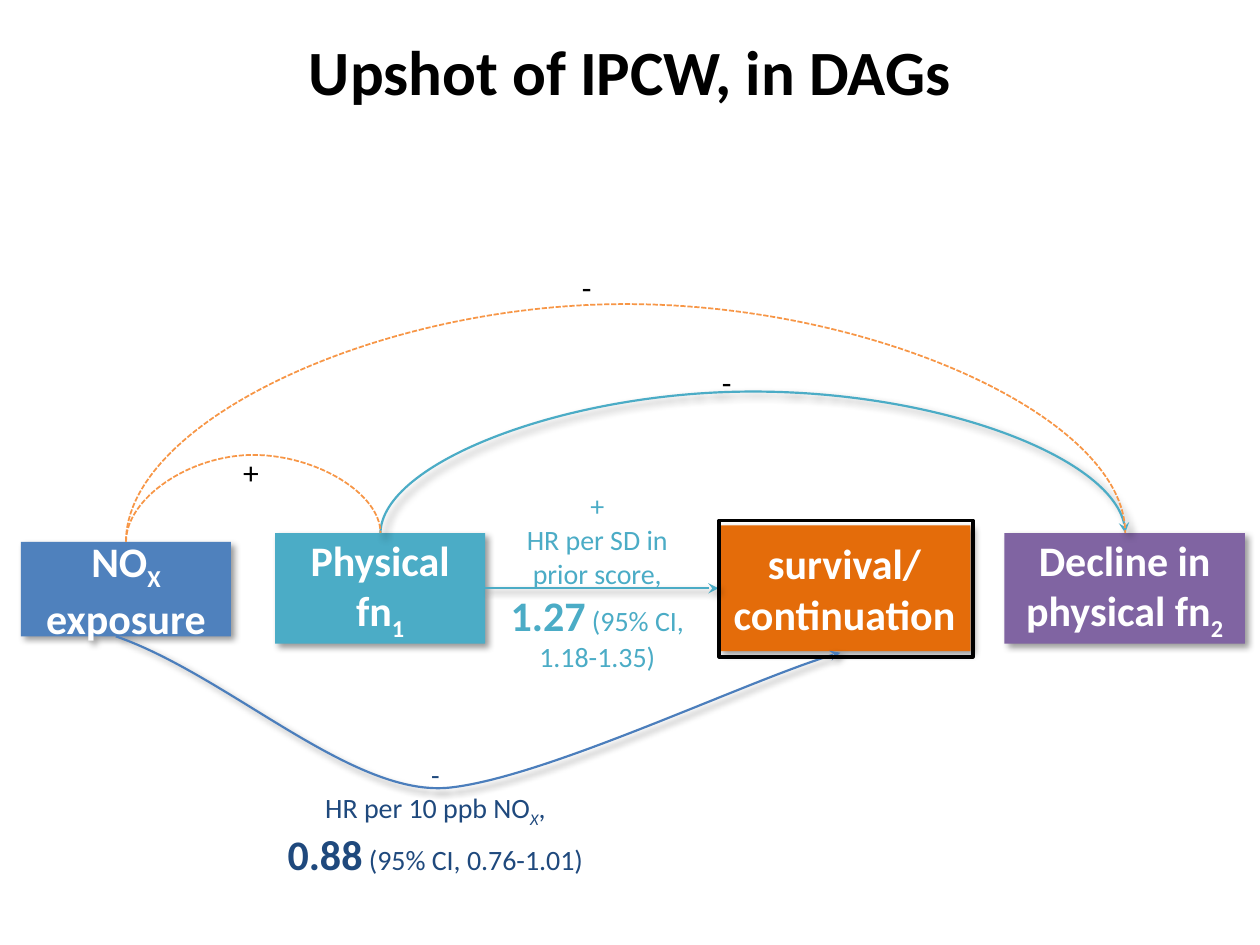
from lxml import etree
from pptx import Presentation, util as u
from pptx.dml.color import RGBColor
from pptx.enum import dml, shapes, text
from pptx.oxml.ns import qn

ORANGE, TEAL, BLUE, NAVY = "F79646", "4BACC6", "4B7EBC", "1F497D"
SUB = {"baseline": -25}
BIG = {"size": 24, "bold": True}


def color(value):
    return RGBColor.from_string(value)


def add_child(parent, tag, **attributes):
    child = etree.SubElement(parent, qn(tag))
    for name, value in attributes.items():
        child.set(name, str(value))
    return child


def set_effects(item, shadow=True):
    effects = add_child(item._element.spPr, "a:effectLst")
    if shadow:
        outer = add_child(effects, "a:outerShdw", blurRad=u.Pt(4), dist=u.Pt(3),
                          dir=45 * 60000, algn="tl", rotWithShape=0)
        black = add_child(outer, "a:srgbClr", val="000000")
        add_child(black, "a:alpha", val=40000)


def set_line(item, ink, width, dashed=False, arrow=False):
    item.line.color.rgb = color(ink)
    item.line.width = u.Pt(width)
    if dashed:
        item.line.dash_style = dml.MSO_LINE.SQUARE_DOT
    if arrow:
        add_child(item.line._get_or_add_ln(), "a:tailEnd", type="stealth")


def add_span(para, content, size=18, ink="000000", bold=False, italic=False, baseline=0):
    span = para.add_run()
    span.text = content
    font = span.font
    font.name, font.size = "Calibri", u.Pt(size)
    font.bold, font.italic = bold, italic
    font.color.rgb = color(ink)
    if baseline:
        span._r.get_or_add_rPr().set("baseline", str(baseline * 1000))


def write(box, paragraphs, align=text.PP_ALIGN.CENTER, anchor=text.MSO_ANCHOR.MIDDLE, **base):
    frame = box.text_frame
    frame.word_wrap = True
    frame.vertical_anchor = anchor
    for index, spans in enumerate(paragraphs):
        para = frame.add_paragraph() if index else frame.paragraphs[0]
        para.alignment = align
        for content, change in spans:
            add_span(para, content, **{**base, **change})


def add_node(page, bounds, fill, spans):
    box = page.shapes.add_shape(shapes.MSO_SHAPE.RECTANGLE, *map(u.Pt, bounds))
    box.fill.solid()
    box.fill.fore_color.rgb = color(fill)
    box.line.fill.background()
    set_effects(box)
    write(box, [spans], ink="FFFFFF", **BIG)


def add_frame(page, bounds):
    box = page.shapes.add_shape(shapes.MSO_SHAPE.RECTANGLE, *map(u.Pt, bounds))
    box.fill.background()
    set_line(box, "000000", 2.25)
    set_effects(box, shadow=False)


def add_label(page, bounds, paragraphs, **base):
    box = page.shapes.add_textbox(*map(u.Pt, bounds))
    write(box, paragraphs, anchor=text.MSO_ANCHOR.TOP, **base)
    box.text_frame.auto_size = text.MSO_AUTO_SIZE.SHAPE_TO_FIT_TEXT


def add_arrow(page, start, end, ink):
    arrow = page.shapes.add_connector(
        shapes.MSO_CONNECTOR.STRAIGHT, *map(u.Pt, (*start, *end)))
    set_line(arrow, ink, 1.25, arrow=True)
    set_effects(arrow)


def add_arc(page, start, end, peak, ink, width, dashed=False, arrow=False):
    (x1, y1), (x2, y2) = start, end
    across, along = y1 - y2, x2 - x1
    left, top = (x1 + x2 - across) / 2, (y1 + y2 - along) / 2
    arc = page.shapes.add_connector(
        shapes.MSO_CONNECTOR.CURVE,
        *map(u.Pt, (left + across, top + along, left, top)))
    properties = arc._element.spPr
    properties.find(qn("a:xfrm")).set("rot", str(90 * 60000))
    guides = properties.find(qn("a:prstGeom")).find(qn("a:avLst"))
    bend = round((y1 - peak) / across * 100000)
    add_child(guides, "a:gd", name="adj1", fmla=f"val {bend}")
    set_line(arc, ink, width, dashed, arrow)
    set_effects(arc, shadow=arrow)


def add_bezier(page, points, ink):
    corners = [(u.Pt(x), u.Pt(y)) for x, y in points]
    builder = page.shapes.build_freeform(*corners[0])
    builder.add_line_segments(corners[1:], close=False)
    curve = builder.convert_to_shape()
    steps = list(curve._element.iter(qn("a:lnTo")))
    for first in range(0, len(steps), 3):
        group = steps[first:first + 3]
        bezier = add_child(group[0].getparent(), "a:cubicBezTo")
        for step in group:
            bezier.append(step[0])
            step.getparent().remove(step)
    curve.fill.background()
    set_line(curve, ink, 1.25, arrow=True)
    set_effects(curve)


def main():
    deck = Presentation()
    deck.slide_width, deck.slide_height = u.Pt(720), u.Pt(540)
    page = deck.slides.add_slide(deck.slide_layouts[6])

    title = page.shapes.add_textbox(*map(u.Pt, (36, 5.8, 648, 68.4)))
    write(title, [[("Upshot of IPCW, in DAGs", {})]], size=36, bold=True)

    add_node(page, (12, 309.6, 120, 54), "4F81BD",
             [("NO", {}), ("X", SUB), (" exposure", {})])
    add_node(page, (157.2, 304.6, 120, 63.2), TEAL, [("Physical fn", {}), ("1", SUB)])
    add_node(page, (573.9, 304.6, 137.5, 63.2), "8064A2",
             [("Decline in physical fn", {}), ("2", SUB)])
    add_node(page, (410.6, 300.2, 144, 72), "E46C0A", [("survival/ continuation", {})])

    add_arrow(page, (277.2, 336.2), (410.6, 336.2), TEAL)
    add_bezier(page, [(66.2, 363.6), (131.8, 386.6), (202.3, 456.5), (257.8, 450),
                      (313.9, 443.5), (434.9, 385.2), (480.2, 373)], BLUE)

    exposure, function, decline = (72, 309.6), (217.4, 304.6), (643, 304.6)
    add_arc(page, (217.4, 305.1), decline, 225.4, TEAL, 1.25, arrow=True)
    add_arc(page, exposure, function, 259.9, ORANGE, 1, dashed=True)
    add_arc(page, exposure, decline, 173.5, ORANGE, 1, dashed=True)
    add_frame(page, (411.1, 297.4, 144.7, 77.8))

    add_label(page, (146.9, 429.1, 203.8, 74.9), [
        [("-", {})],
        [("HR per 10 ppb NO", {}), ("X", {"italic": True, **SUB}), (",", {})],
        [("0.88", BIG), (" (95% CI, 0.76-1.01)", {})],
    ], size=16, ink=NAVY)
    add_label(page, (277.2, 275.8, 128.2, 113.8), [
        [("+", {})],
        [("HR per SD in prior score, ", {}), ("1.27", BIG), (" (95% CI, 1.18-1.35)", {})],
    ], size=16, ink=TEAL)
    for sign, left, top in (("+", 131.8, 255.6), ("-", 405.4, 203.8), ("-", 325.4, 149.8)):
        add_label(page, (left, top, 36, 28.8), [[(sign, {})]], align=text.PP_ALIGN.LEFT)

    deck.save("out.pptx")


if __name__ == "__main__":
    main()
